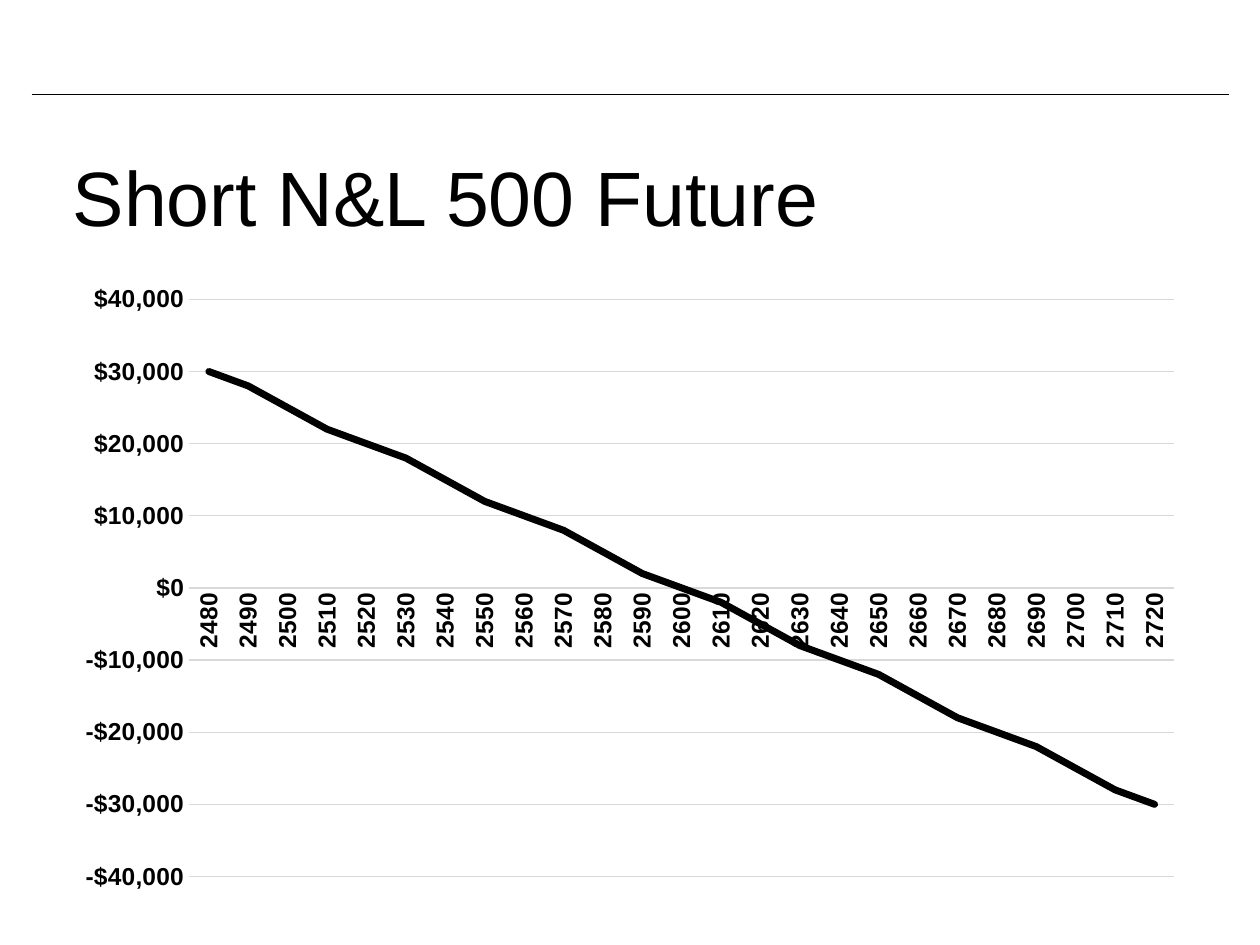
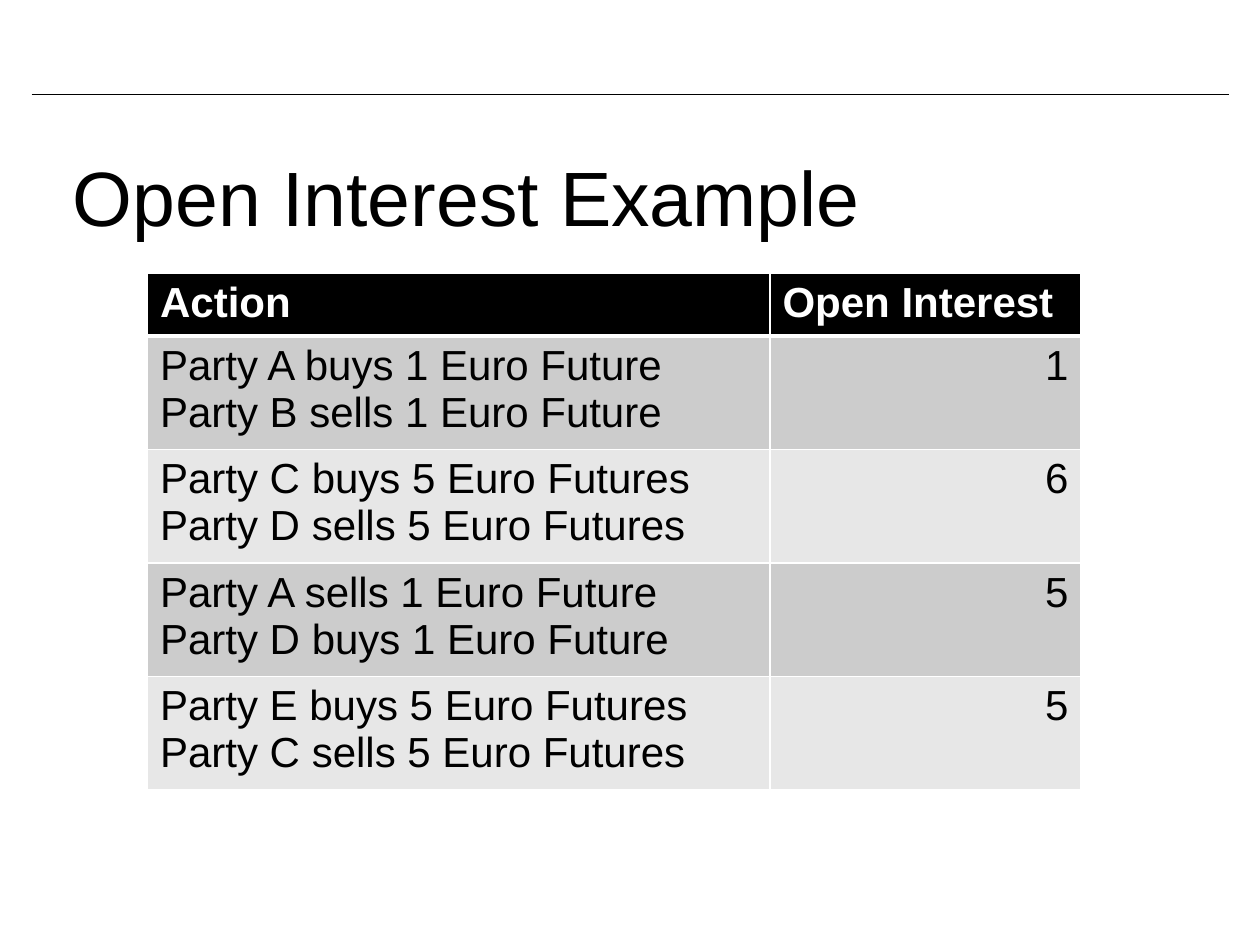
"""Build two slides on futures: a payoff chart and an open interest table."""
from lxml.etree import SubElement
from pptx import Presentation
from pptx.chart.data import CategoryChartData
from pptx.dml.color import RGBColor
from pptx.enum.chart import XL_CHART_TYPE, XL_TICK_MARK
from pptx.enum.shapes import MSO_CONNECTOR
from pptx.enum.text import MSO_ANCHOR, PP_ALIGN
from pptx.oxml import parse_xml
from pptx.oxml.ns import nsdecls, qn
from pptx.util import Pt

HUES = {"ink": "000000", "paper": "FFFFFF", "grid": "D9D9D9",
        "dark": "CCCCCC", "light": "E7E7E7"}
FACE = "Arial"


class Deck:
    def __init__(self):
        self.prs = Presentation()
        self.prs.slide_width, self.prs.slide_height = Pt(720), Pt(540)
        self.slide = None

    def hue(self, name):
        return RGBColor.from_string(HUES[name])

    def style(self, font, size, color="ink", bold=False):
        font.name, font.size, font.bold = FACE, Pt(size), bold
        font.color.rgb = self.hue(color)

    def stroke(self, line, color, width):
        line.color.rgb, line.width = self.hue(color), Pt(width)

    def page(self, title):
        self.slide = self.prs.slides.add_slide(self.prs.slide_layouts[6])
        self.rule(18, 54, 702)
        self.title(title)

    def rule(self, left, top, right):
        line = self.slide.shapes.add_connector(
            MSO_CONNECTOR.STRAIGHT, Pt(left), Pt(top), Pt(right), Pt(top))
        self.stroke(line.line, "ink", 1)
        SubElement(line._element.spPr, qn("a:effectLst"))

    def title(self, text):
        box = self.slide.shapes.add_textbox(Pt(36), Pt(78), Pt(648), Pt(78))
        frame = box.text_frame
        frame.word_wrap = True
        frame.vertical_anchor = MSO_ANCHOR.TOP
        frame.margin_left, frame.margin_top = Pt(5.6), Pt(7.2)
        frame.text = text
        self.style(frame.paragraphs[0].font, 44)

    def chart(self, cats, vals, top):
        data = CategoryChartData(number_format='"$"#,##0')
        data.categories = [str(cat) for cat in cats]
        data.add_series("Series 1", vals)
        chart = self.slide.shapes.add_chart(
            XL_CHART_TYPE.LINE, Pt(36), Pt(156), Pt(648), Pt(360), data).chart
        chart.has_legend = chart.has_title = False
        self.style(chart.font, 14, bold=True)
        for axis in (chart.category_axis, chart.value_axis):
            axis.major_tick_mark = axis.minor_tick_mark = XL_TICK_MARK.NONE
            self.style(axis.tick_labels.font, 14, bold=True)
        base, scale = chart.category_axis, chart.value_axis
        self.stroke(base.format.line, "grid", 0.75)
        turn = base._element.find(qn("c:txPr")).find(qn("a:bodyPr"))
        turn.set("rot", "-5400000")
        turn.set("vert", "horz")
        scale.minimum_scale, scale.maximum_scale = -top, top
        scale.major_unit = top / 4
        scale.format.line.fill.background()
        self.stroke(scale.major_gridlines.format.line, "grid", 0.75)
        scale.tick_labels.number_format = '"$"#,##0'
        scale.tick_labels.number_format_is_linked = False
        chart.plots[0].vary_by_categories = False
        line = chart.plots[0].series[0]
        line.smooth = False
        self.stroke(line.format.line, "ink", 4)
        line.format.line._ln.set("cap", "rnd")

    def edge(self, cell, side, width):
        cell._tc.get_or_add_tcPr().append(parse_xml(
            f'<a:ln{side} {nsdecls("a")} w="{Pt(width)}"><a:solidFill>'
            f'<a:srgbClr val="{HUES["paper"]}"/></a:solidFill></a:ln{side}>'))

    def cell(self, cell, text, row, right):
        head = row == 0
        for side in "LRTB":
            thick = (row, side) in ((0, "B"), (1, "T"))
            self.edge(cell, side, 3 if thick else 1)
        cell.fill.solid()
        cell.fill.fore_color.rgb = self.hue(
            "ink" if head else "dark" if row % 2 else "light")
        cell.text = text
        for para in cell.text_frame.paragraphs:
            self.style(para.font, 24, "paper" if head else "ink", head)
            para.alignment = PP_ALIGN.RIGHT if right else PP_ALIGN.LEFT

    def table(self, rows, wide, high):
        table = self.slide.shapes.add_table(
            len(rows), len(wide), Pt(84.3), Pt(156), Pt(sum(wide)),
            Pt(sum(high))).table
        table.first_row = table.horz_banding = False
        for col, width in zip(table.columns, wide):
            col.width = Pt(width)
        for i, (row, height) in enumerate(zip(rows, high)):
            table.rows[i].height = Pt(height)
            for j, text in enumerate(row):
                self.cell(table.cell(i, j), text, i, i > 0 and j == 1)


def main():
    deck = Deck()

    deck.page("Short N&L 500 Future")
    strike, size = 2600, 250
    spots = range(2480, 2721, 10)
    gains = [round(size * (strike - spot), -3) for spot in spots]
    deck.chart(spots, gains, 40000)

    deck.page("Open Interest Example")
    rows = [("Action", "Open Interest"),
            ("Party A buys 1 Euro Future\nParty B sells 1 Euro Future", "1"),
            ("Party C buys 5 Euro Futures\nParty D sells 5 Euro Futures", "6"),
            ("Party A sells 1 Euro Future\nParty D buys 1 Euro Future", "5"),
            ("Party E buys 5 Euro Futures\nParty C sells 5 Euro Futures", "5")]
    deck.table(rows, [355.7, 177.8], [36] + [64.8] * 4)

    deck.prs.save("out.pptx")


if __name__ == "__main__":
    main()
